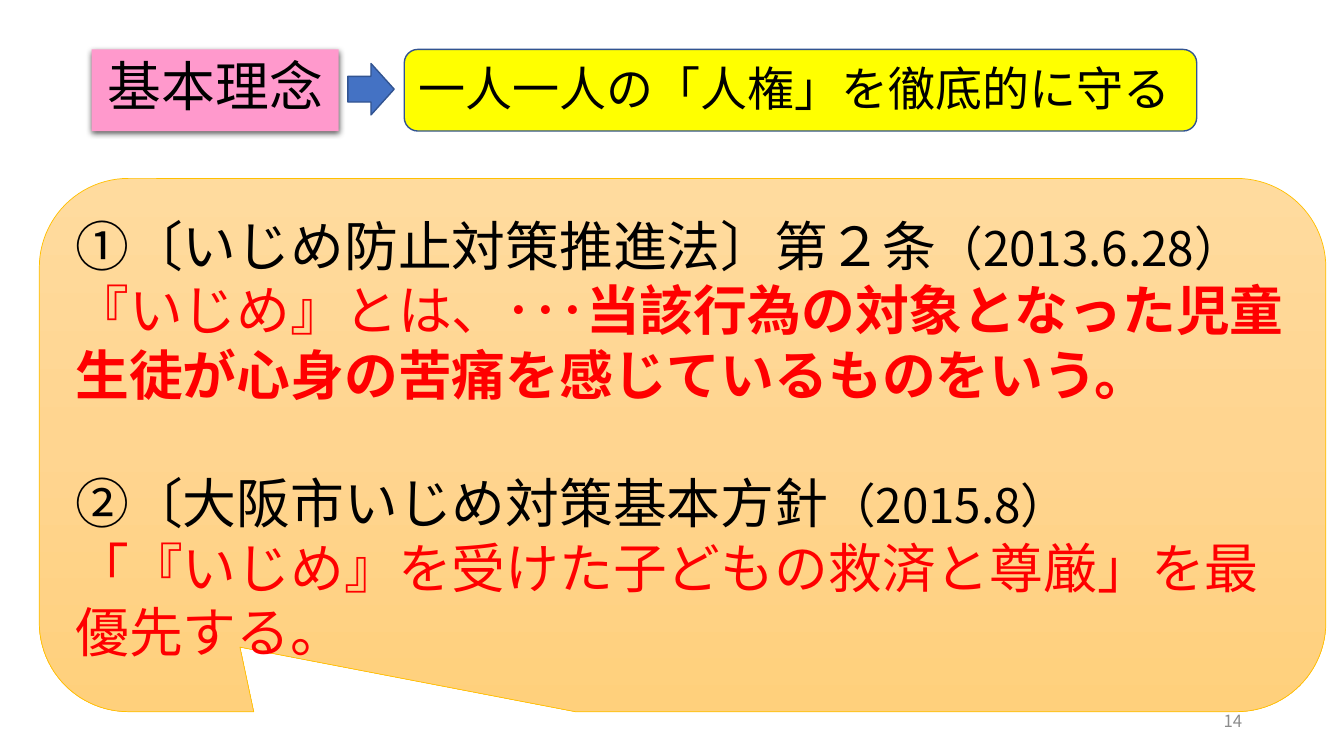
from lxml import etree
from pptx import Presentation
from pptx import util as u
from pptx.dml import color
from pptx.enum import shapes, text
from pptx.oxml import ns, parse_xml

FONT = "Noto Sans CJK JP"
A = ns.nsdecls("a")


def rgb(value):
    return color.RGBColor.from_string(value)


def add_run(p, words, size, hue="000000", bold=False, face=FONT):
    r = p.add_run()
    r.text = words
    r.font.size = u.Pt(size)
    r.font.bold = bold
    r.font.color.rgb = rgb(hue)
    r.font.name = face
    ea = etree.SubElement(r.font._element, ns.qn("a:ea"))
    ea.set("typeface", FONT)


prs = Presentation()
prs.slide_width = u.Inches(13.33)
prs.slide_height = u.Inches(7.5)
s = prs.slides.add_slide(prs.slide_layouts[5])

panels = {}
for name, kind, box, fill, line, width in [
    ("callout", "ROUNDED_RECTANGULAR_CALLOUT", (0.39, 1.77, 12.76, 5.29), "FFD590", "FFC000", 0.5),
    ("banner", "ROUNDED_RECTANGLE", (4.01, 0.49, 7.86, 0.81), "FFFF00", "325491", 1),
    ("arrow", "RIGHT_ARROW", (3.45, 0.63, 0.46, 0.51), "4472C4", "325491", 1),
]:
    sp = s.shapes.add_shape(shapes.MSO_SHAPE[kind], *map(u.Inches, box))
    sp.shadow.inherit = False
    sp.fill.solid()
    sp.fill.fore_color.rgb = rgb(fill)
    sp.line.color.rgb = rgb(line)
    sp.line.width = u.Pt(width)
    panels[name] = sp

callout = panels["callout"]
for i, value in enumerate((-0.344, 0.379, 0.167)):
    callout.adjustments[i] = value
stops = "".join(
    f'<a:gs pos="{pos}000"><a:srgbClr val="{hue}"/></a:gs>'
    for pos, hue in [(0, "FFDB9E"), (50, "FFD590"), (100, "FFD07C")]
)
solid = callout._element.spPr.find(ns.qn("a:solidFill"))
solid.getparent().replace(solid, parse_xml(
    f'<a:gradFill {A} rotWithShape="1"><a:gsLst>{stops}</a:gsLst>'
    '<a:lin ang="5400000" scaled="0"/></a:gradFill>'))

tf = callout.text_frame
tf.word_wrap = True
tf.vertical_anchor = text.MSO_ANCHOR.TOP
tf.margin_top = u.Inches(0.08)
paragraphs = [
    [("①〔いじめ防止対策推進法〕第２条", 38.4), ("（2013.6.28）", 34)],
    [("『いじめ』とは、･･･", 38.4, "FF0000"),
     ("当該行為の対象となった児童生徒が心身の苦痛を感じているものをいう。", 38.4, "FF0000", True, "Calibri")],
    [("②〔大阪市いじめ対策基本方針", 38.4), ("（2015.8）", 34)],
    [("「『いじめ』を受けた子どもの救済と尊厳」を最優先する。", 38.4, "FF0000")],
]
for i, runs in enumerate(paragraphs):
    p = tf.add_paragraph() if i else tf.paragraphs[0]
    p.alignment = text.PP_ALIGN.LEFT
    p.line_spacing = u.Pt(46)
    p.space_before = u.Pt(46 if i == 2 else 0)
    for run in runs:
        add_run(p, *run)

tf = panels["banner"].text_frame
tf.word_wrap = True
tf.vertical_anchor = text.MSO_ANCHOR.MIDDLE
tf.margin_bottom = u.Inches(0.1)
p = tf.paragraphs[0]
p.alignment = text.PP_ALIGN.LEFT
add_run(p, "一人一人の「人権」を徹底的に守る", 33.6)

title = s.shapes.title
title.left, title.top, title.width, title.height = map(u.Inches, (0.91, 0.49, 2.45, 0.81))
title.fill.solid()
title.fill.fore_color.rgb = rgb("FF99CC")
title._element.spPr.append(parse_xml(
    f'<a:effectLst {A}><a:outerShdw blurRad="57150" dist="19050" dir="5400000" algn="ctr" rotWithShape="0">'
    '<a:srgbClr val="000000"><a:alpha val="63000"/></a:srgbClr></a:outerShdw></a:effectLst>'))
tf = title.text_frame
tf.auto_size = text.MSO_AUTO_SIZE.NONE
tf.word_wrap = True
tf.vertical_anchor = text.MSO_ANCHOR.MIDDLE
tf.margin_bottom = u.Inches(0.15)
p = tf.paragraphs[0]
p.alignment = text.PP_ALIGN.CENTER
add_run(p, "基本理念", 38.4)

number = s.shapes.add_textbox(*map(u.Inches, (9.42, 6.95, 3, 0.4)))
tf = number.text_frame
tf.word_wrap = True
tf.vertical_anchor = text.MSO_ANCHOR.MIDDLE
p = tf.paragraphs[0]
p.alignment = text.PP_ALIGN.RIGHT
add_run(p, "14", 12, "8C8C8C")

prs.save("out.pptx")
